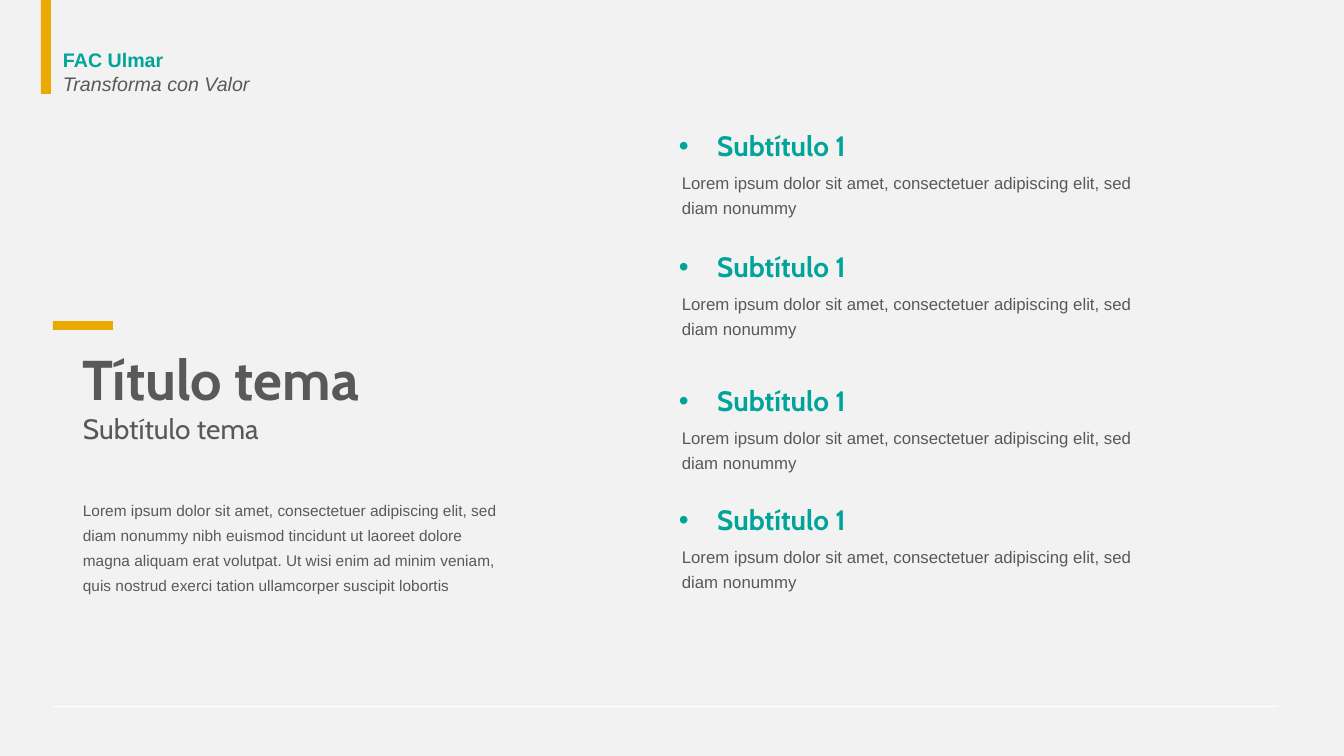
from lxml.etree import SubElement
from pptx import Presentation
from pptx.dml.color import RGBColor
from pptx.enum.shapes import MSO_CONNECTOR, MSO_SHAPE
from pptx.enum.text import MSO_ANCHOR, MSO_AUTO_SIZE, PP_ALIGN
from pptx.oxml.ns import qn
from pptx.util import Emu, Inches, Pt

COLORS = {
    "background": "F2F2F2",
    "text": "595959",
    "teal": "00A499",
    "gold": "EAAA00",
    "rule": "FFFFFF",
}
HEADING_FONT = "Cabin"
BODY_FONT = "Arial"
TOPIC_TEXT = (
    "Lorem ipsum dolor sit amet, consectetuer adipiscing elit, sed diam nonummy "
    "nibh euismod tincidunt ut laoreet dolore magna aliquam erat volutpat. "
    "Ut wisi enim ad minim veniam, quis nostrud exerci tation ullamcorper "
    "suscipit lobortis"
)
POINT_TEXT = "Lorem ipsum dolor sit amet, consectetuer adipiscing elit, sed diam nonummy"
POINT_TOPS = (128, 249, 383, 502)


def px(length):
    return Emu(round(length * 914400 / 100.8))


def color(name):
    return RGBColor.from_string(COLORS[name])


class TopicSlide:
    def __init__(self, presentation):
        self.slide = presentation.slides.add_slide(presentation.slide_layouts[5])
        fill = self.slide.background.fill
        fill.solid()
        fill.fore_color.rgb = color("background")

    def style(self, paragraph, size, font=BODY_FONT, ink="text", bold=False, italic=False):
        paragraph.alignment = PP_ALIGN.LEFT
        for run in paragraph.runs:
            run.font.name = font
            run.font.size = Pt(size)
            run.font.bold = bold
            run.font.italic = italic
            run.font.color.rgb = color(ink)

    def title(self, left, top, width, height, words):
        heading = self.slide.shapes.title
        heading.left, heading.top = px(left), px(top)
        heading.width, heading.height = px(width), px(height)
        frame = heading.text_frame
        frame.text = words
        frame.auto_size = MSO_AUTO_SIZE.NONE
        frame.vertical_anchor = MSO_ANCHOR.MIDDLE
        self.style(frame.paragraphs[0], 40, HEADING_FONT, bold=True)

    def text(self, left, top, width, height, words, wrap=True):
        """Add a text box and return its frame for styling."""
        frame = self.slide.shapes.add_textbox(
            px(left), px(top), px(width), px(height)).text_frame
        frame.word_wrap = wrap
        frame.text = words
        return frame

    def body(self, left, top, width, height, words, size):
        paragraph = self.text(left, top, width, height, words).paragraphs[0]
        paragraph.line_spacing = Pt(18)
        self.style(paragraph, size)

    def bullet_heading(self, left, top, width, height, words):
        frame = self.text(left, top, width, height, words)
        frame.vertical_anchor = MSO_ANCHOR.MIDDLE
        paragraph = frame.paragraphs[0]
        self.style(paragraph, 20, HEADING_FONT, "teal", bold=True)
        properties = paragraph._p.get_or_add_pPr()
        indent = Inches(0.38)
        properties.set("marL", str(indent))
        properties.set("indent", str(-indent))
        SubElement(properties, qn("a:buFont")).set("typeface", BODY_FONT)
        SubElement(properties, qn("a:buChar")).set("char", "•")

    def bar(self, left, top, width, height):
        accent = self.slide.shapes.add_shape(
            MSO_SHAPE.RECTANGLE, px(left), px(top), px(width), px(height))
        accent.shadow.inherit = False
        accent.fill.solid()
        accent.fill.fore_color.rgb = color("gold")
        accent.line.fill.background()

    def rule(self, left, right, y):
        line = self.slide.shapes.add_connector(
            MSO_CONNECTOR.STRAIGHT, px(left), px(y), px(right), px(y))
        line.line.color.rgb = color("rule")
        line.line.width = Pt(0.5)
        SubElement(line._element.spPr, qn("a:effectLst"))


def main():
    presentation = Presentation()
    presentation.slide_width = px(1344)
    presentation.slide_height = px(756)
    topic = TopicSlide(presentation)

    topic.rule(53, 1278, 706)
    topic.title(72, 355, 398, 46, "Título tema")
    subtitle = topic.text(73, 410, 379, 45, "Subtítulo tema").paragraphs[0]
    subtitle.line_spacing = 0.9
    subtitle.space_before = Pt(10)
    topic.style(subtitle, 20, HEADING_FONT)
    topic.body(73, 489, 448, 109, TOPIC_TEXT, 11)
    topic.bar(53, 321, 60, 9)

    for top in POINT_TOPS:
        topic.bullet_heading(669, top, 260, 35, "Subtítulo 1")
        topic.body(672, top + 35, 472, 58, POINT_TEXT, 12)

    header = topic.text(53, 43, 208, 57, "FAC Ulmar\nTransforma con Valor", wrap=False)
    school, motto = header.paragraphs
    topic.style(school, 14, ink="teal", bold=True)
    topic.style(motto, 14, italic=True)
    topic.bar(41, 0, 10, 94)

    presentation.save("out.pptx")


if __name__ == "__main__":
    main()
